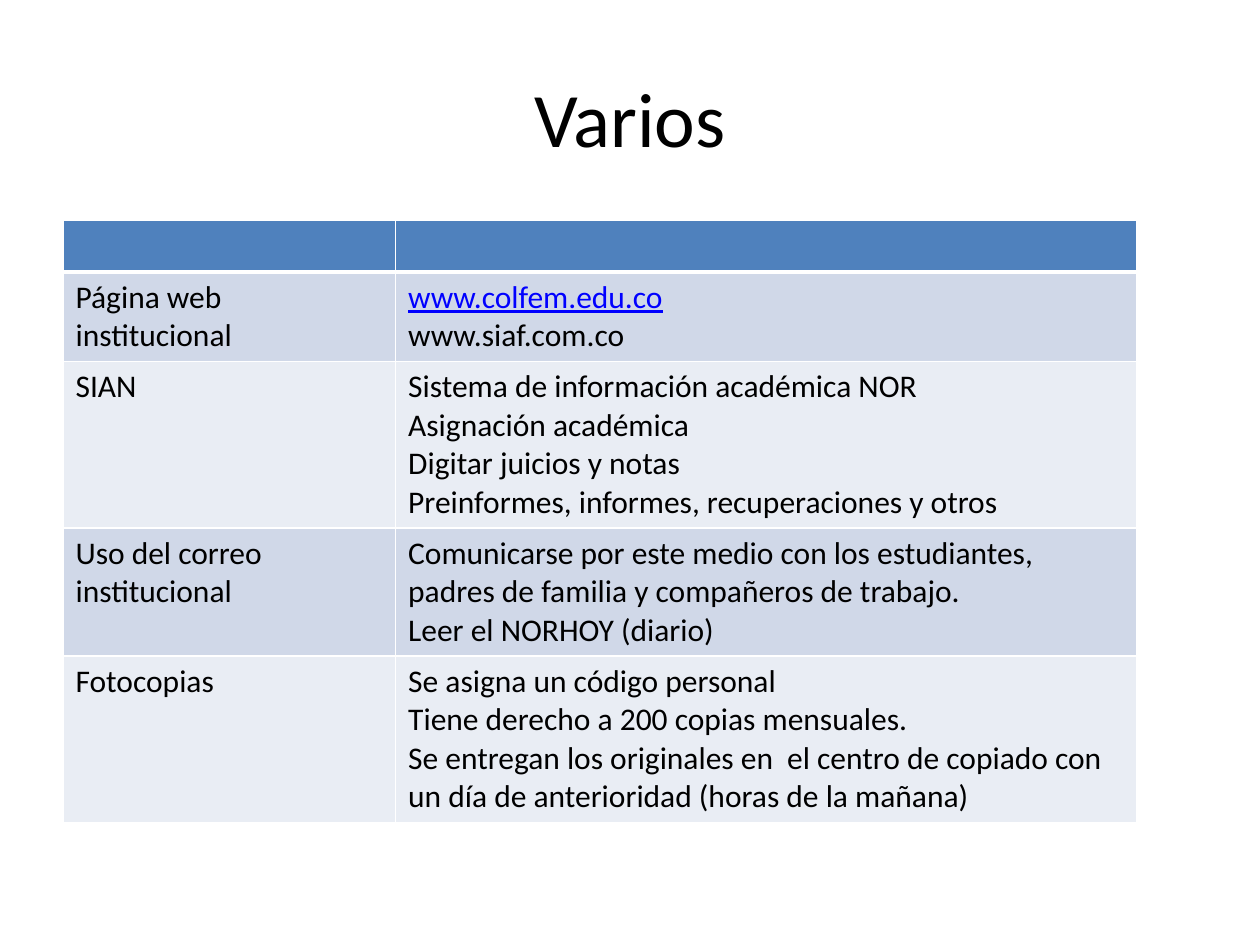
import pptx
import pptx.util
import pptx.dml.color
import pptx.enum.text
import pptx.oxml
import pptx.oxml.ns

Inches = pptx.util.Inches
RGB = pptx.dml.color.RGBColor
ALIGN = pptx.enum.text.PP_ALIGN
BLACK = RGB(0x00, 0x00, 0x00)
WHITE = RGB(0xFF, 0xFF, 0xFF)
LINK = RGB(0x00, 0x00, 0xFF)
HEAD = RGB(0x4F, 0x81, 0xBD)
DARK = RGB(0xD0, 0xD8, 0xE8)
PALE = RGB(0xE9, 0xED, 0xF4)


def put(frame, text, size=18, color=BLACK, align=ALIGN.LEFT):
    frame.word_wrap = True
    for i, line in enumerate(text.split("\n")):
        para = frame.paragraphs[0] if i == 0 else frame.add_paragraph()
        para.alignment = align
        para.font.size = pptx.util.Pt(size)
        if line:
            run = para.add_run()
            run.text = line
            run.font.name = "Calibri"
            run.font.size = pptx.util.Pt(size)
            run.font.color.rgb = color


def edge(cell, side, width):
    line = pptx.oxml.parse_xml(
        f'<a:ln{side} {pptx.oxml.ns.nsdecls("a")} w="{pptx.util.Pt(width)}">'
        f'<a:solidFill><a:srgbClr val="{WHITE}"/></a:solidFill></a:ln{side}>')
    cell._tc.get_or_add_tcPr().append(line)


deck = pptx.Presentation()
deck.slide_width = Inches(10)
deck.slide_height = Inches(7.5)
slide = deck.slides.add_slide(deck.slide_layouts[5])

title = slide.shapes.title
title.left, title.top = Inches(0.5), Inches(0.3)
title.width, title.height = Inches(9), Inches(1.25)
title.text_frame.vertical_anchor = pptx.enum.text.MSO_ANCHOR.MIDDLE
put(title.text_frame, "Varios", size=44, align=ALIGN.CENTER)

rows = [
    ("", ""),
    ("Página web institucional", "www.colfem.edu.co\nwww.siaf.com.co"),
    ("SIAN", "Sistema de información académica NOR\n"
             "Asignación académica\n"
             "Digitar juicios y notas\n"
             "Preinformes, informes, recuperaciones y otros"),
    ("Uso del correo institucional",
     "Comunicarse por este medio con los estudiantes, "
     "padres de familia y compañeros de trabajo.\n"
     "Leer el NORHOY (diario)"),
    ("Fotocopias", "Se asigna un código personal\n"
                   "Tiene derecho a 200 copias mensuales.\n"
                   "Se entregan los originales en  el centro de copiado con "
                   "un día de anterioridad (horas de la mañana)"),
]
high = 0.41
table = slide.shapes.add_table(
    len(rows), 2, Inches(0.5), Inches(1.75),
    Inches(8.52), Inches(high * len(rows))).table
for col, width in zip(table.columns, (2.64, 5.88)):
    col.width = Inches(width)

for r, row in enumerate(rows):
    table.rows[r].height = Inches(high)
    fill = HEAD if r == 0 else DARK if r % 2 else PALE
    for c, text in enumerate(row):
        cell = table.cell(r, c)
        for side in "LRTB":
            edge(cell, side, 3 if (r, side) in ((0, "B"), (1, "T")) else 1)
        cell.fill.solid()
        cell.fill.fore_color.rgb = fill
        put(cell.text_frame, text)

link = table.cell(1, 1).text_frame.paragraphs[0].runs[0].font
link.color.rgb = LINK
link.underline = True

deck.save("out.pptx")
